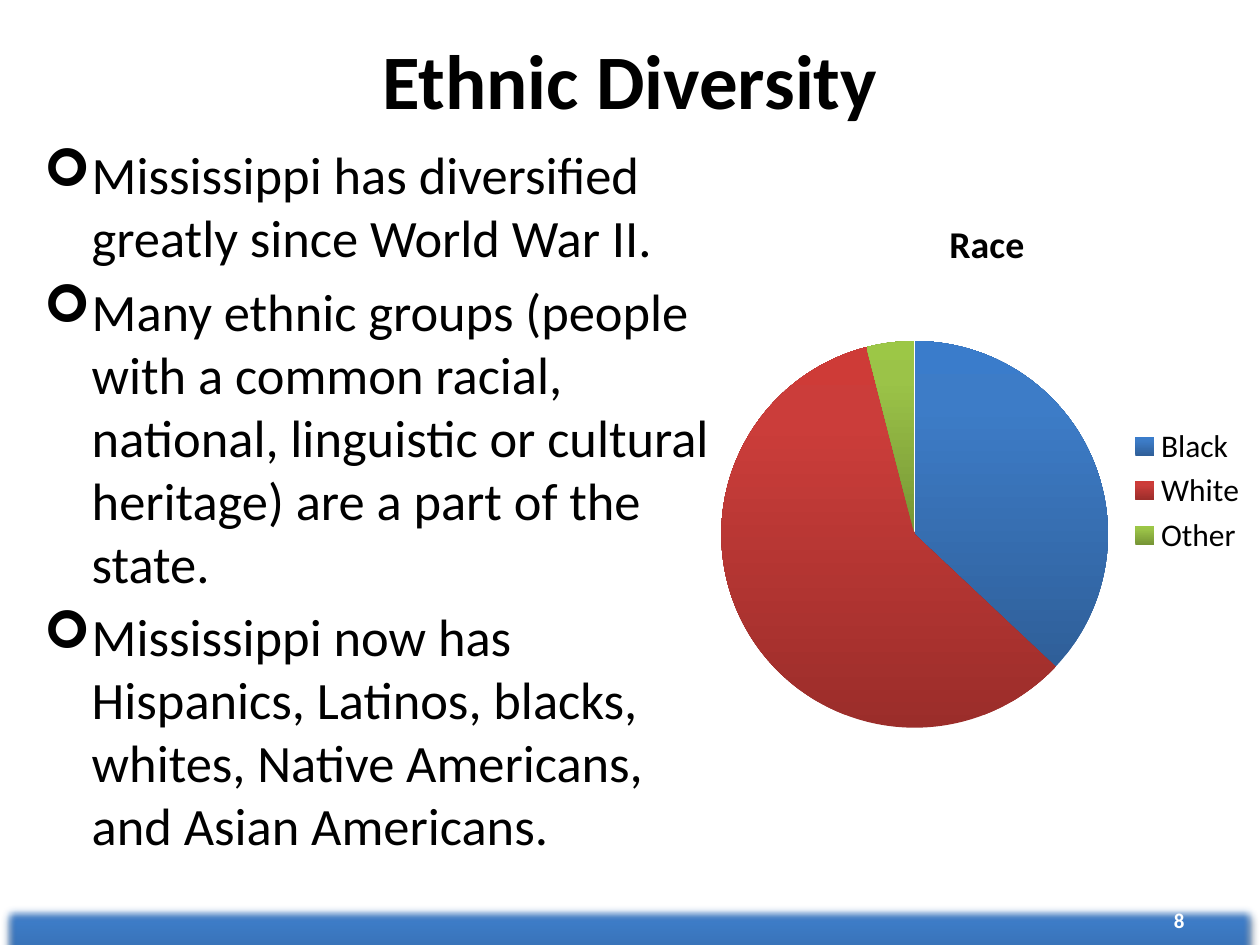
from copy import deepcopy

from lxml import etree
from pptx import Presentation
from pptx.chart.data import CategoryChartData
from pptx.dml.color import RGBColor
from pptx.enum.chart import XL_CHART_TYPE, XL_LEGEND_POSITION
from pptx.enum.shapes import MSO_SHAPE
from pptx.enum.text import MSO_ANCHOR, PP_ALIGN
from pptx.oxml import parse_xml
from pptx.oxml.ns import nsdecls, qn
from pptx.util import Inches, Pt

PIE = XL_CHART_TYPE.PIE
LEGEND_RIGHT = XL_LEGEND_POSITION.RIGHT
RECTANGLE = MSO_SHAPE.RECTANGLE
TOP, MIDDLE = MSO_ANCHOR.TOP, MSO_ANCHOR.MIDDLE
LEFT, CENTER, RIGHT = PP_ALIGN.LEFT, PP_ALIGN.CENTER, PP_ALIGN.RIGHT

BLUE = ("2F5F99", "3D7CC7", "3A7CCB")
RED = ("9B2D2A", "CB3D3A", "CE3B37")
GREEN = ("769535", "9BC348", "9CC746")
STOP_POSITIONS = (0, 0.8, 1)

POINTS = [
    "Mississippi has diversified greatly since World War II.",
    "Many ethnic groups (people with a common racial, national, linguistic "
    "or cultural heritage) are a part of the state.",
    "Mississippi now has Hispanics, Latinos, blacks, whites, Native Americans, "
    "and Asian Americans.",
]
RACES = [("Black", 37, BLUE), ("White", 59, RED), ("Other", 4, GREEN)]


def color(hex_string):
    return RGBColor.from_string(hex_string)


def fill_gradient(fill, colors):
    """Run the three colours from bottom to top."""
    fill.gradient()
    fill.gradient_angle = 90
    last_stop = fill.gradient_stops[1]._gs
    last_stop.addnext(deepcopy(last_stop))
    for stop, position, hex_string in zip(fill.gradient_stops, STOP_POSITIONS, colors):
        stop.position = position
        stop.color.rgb = color(hex_string)


def place_manually(element, x, y, size=None):
    """Set a chart part's layout as fractions of the chart area."""
    layout = element.find(qn("c:layout"))
    if layout is None:
        layout = parse_xml(f"<c:layout {nsdecls('c')}/>")
        if size:
            element.insert(0, layout)
        else:
            element.find(qn("c:tx")).addnext(layout)
    for child in list(layout):
        layout.remove(child)
    manual = etree.SubElement(layout, qn("c:manualLayout"))
    settings = [("xMode", "edge"), ("yMode", "edge"), ("x", x), ("y", y)]
    if size:
        settings.insert(0, ("layoutTarget", "inner"))
        settings += zip(("w", "h"), size)
    for name, value in settings:
        etree.SubElement(manual, qn(f"c:{name}")).set("val", str(value))


class SlideBuilder:
    font_name = "Calibri"
    text_color = "000000"

    def __init__(self, slide):
        self.slide = slide

    def style(self, font, size, hex_string=text_color, bold=False):
        font.name = self.font_name
        font.size = Pt(size)
        font.bold = bold
        font.color.rgb = color(hex_string)

    def soft_bar(self, left, top, width, height, colors):
        bar = self.slide.shapes.add_shape(
            RECTANGLE, Inches(left), Inches(top), Inches(width), Inches(height))
        fill_gradient(bar.fill, colors)
        bar.line.fill.background()
        bar.shadow.inherit = False
        effects = bar._element.spPr.find(qn("a:effectLst"))
        effects.append(parse_xml(
            f'<a:outerShdw {nsdecls("a")} blurRad="39370" dist="22860" dir="5400000" '
            'rotWithShape="0"><a:srgbClr val="000000"><a:alpha val="35000"/>'
            '</a:srgbClr></a:outerShdw>'))
        effects.append(parse_xml(f'<a:softEdge {nsdecls("a")} rad="63500"/>'))

    def text(self, left, top, width, height, lines, size, align=LEFT, anchor=MIDDLE,
             hex_string=text_color, bold=False, bullet=None):
        box = self.slide.shapes.add_textbox(
            Inches(left), Inches(top), Inches(width), Inches(height))
        frame = box.text_frame
        frame.word_wrap = True
        frame.vertical_anchor = anchor
        for index, line in enumerate(lines):
            paragraph = frame.add_paragraph() if index else frame.paragraphs[0]
            paragraph.alignment = align
            if index:
                paragraph.space_before = Pt(size * 0.2)
            if bullet:
                self.add_bullet(paragraph, bullet)
            run = paragraph.add_run()
            run.text = line
            self.style(run.font, size, hex_string, bold)

    def add_bullet(self, paragraph, character):
        properties = paragraph._p.get_or_add_pPr()
        indent = Inches(0.38)
        properties.set("marL", str(indent))
        properties.set("indent", str(-indent))
        etree.SubElement(properties, qn("a:buFont")).set("typeface", "Wingdings")
        etree.SubElement(properties, qn("a:buChar")).set("char", character)

    def pie(self, left, top, width, height, title, rows):
        data = CategoryChartData()
        data.categories = [name for name, _, _ in rows]
        data.add_series("Series 1", [value for _, value, _ in rows])
        chart = self.slide.shapes.add_chart(
            PIE, Inches(left), Inches(top), Inches(width), Inches(height), data).chart
        self.style(chart.font, 18)
        chart.has_title = True
        run = chart.chart_title.text_frame.paragraphs[0].add_run()
        run.text = title
        self.style(run.font, 21.6, bold=True)
        chart.has_legend = True
        chart.legend.position = LEGEND_RIGHT
        chart.legend.include_in_layout = False
        plot = chart.plots[0]
        plot.vary_by_categories = True
        for index, (_, _, colors) in enumerate(rows):
            fill_gradient(plot.series[0].points[index].format.fill, colors)
        place_manually(chart.chart_title._element, 0.43, 0.05)
        place_manually(plot._element.getparent(), 0.03, 0.26, (0.7, 0.62))


def main():
    presentation = Presentation()
    presentation.slide_width = Inches(10)
    presentation.slide_height = Inches(7.5)
    slide = presentation.slides.add_slide(presentation.slide_layouts[6])
    builder = SlideBuilder(slide)
    builder.soft_bar(0, 7.17, 10, 0.75, BLUE)
    builder.text(7.17, 7.1, 2.33, 0.4, ["8"], 12, RIGHT, hex_string="FFFFFF", bold=True)
    builder.text(0.25, 1.08, 5.5, 6.83, POINTS, 30, anchor=TOP, bullet="➢")
    builder.text(0.5, 0, 9, 1.25, ["Ethnic Diversity"], 44, CENTER, bold=True)
    builder.pie(5.58, 1.42, 4.42, 4.95, "Race", RACES)
    presentation.save("out.pptx")


if __name__ == "__main__":
    main()
